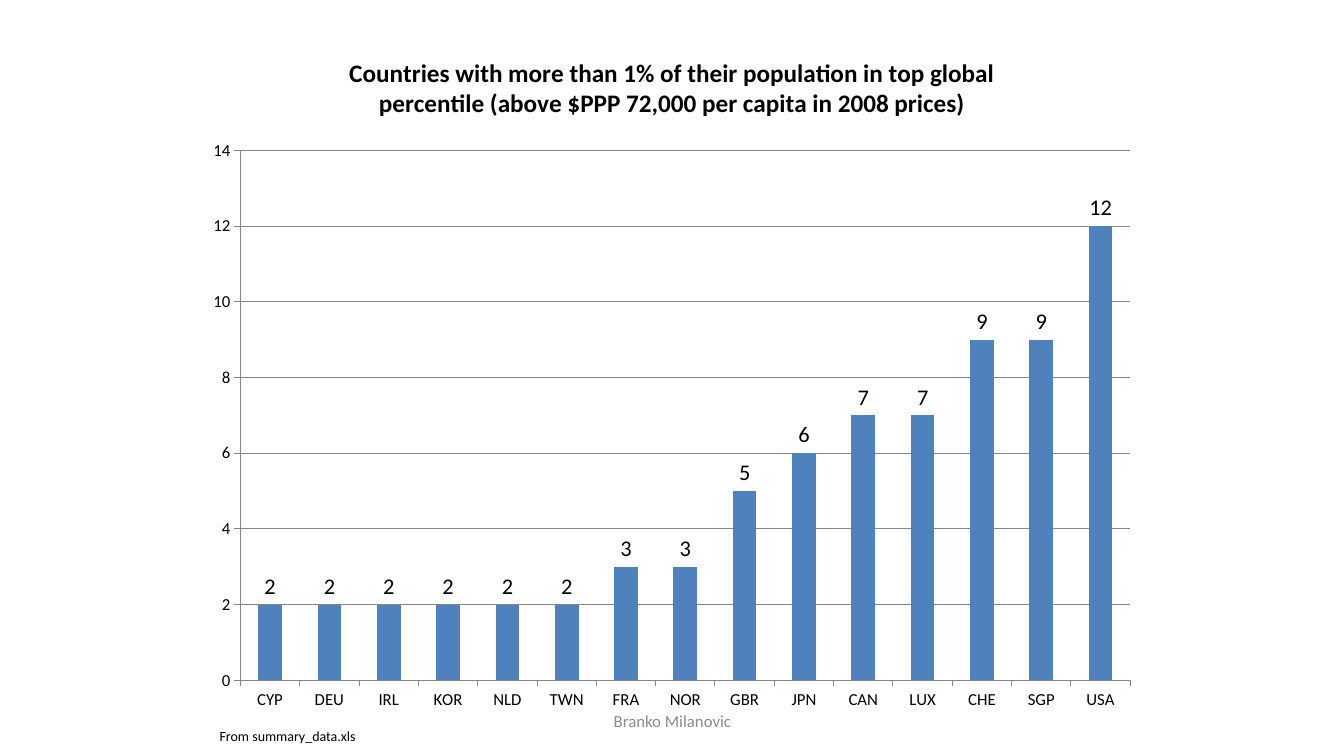
from lxml import etree
from pptx import Presentation
from pptx import util as u
from pptx.chart.data import CategoryChartData
from pptx.dml.color import RGBColor
from pptx.enum import chart as ch, text
from pptx.oxml.ns import qn

COLORS = {"bar": "4F81BD", "grid": "878787", "text": "000000", "footer": "8C8C8C"}
FONT = "Calibri"
TITLE = ("Countries with more than 1% of their population in top global "
         "percentile (above $PPP 72,000 per capita in 2008 prices)")
SHARES = {"CYP": 2, "DEU": 2, "IRL": 2, "KOR": 2, "NLD": 2, "TWN": 2,
          "FRA": 3, "NOR": 3, "GBR": 5, "JPN": 6, "CAN": 7, "LUX": 7,
          "CHE": 9, "SGP": 9, "USA": 12}


def style_font(font, size, color="text", bold=False):
    font.name, font.size, font.bold = FONT, u.Pt(size), bold
    font.color.rgb = RGBColor.from_string(COLORS[color])


def style_line(line):
    line.color.rgb = RGBColor.from_string(COLORS["grid"])
    line.width = u.Pt(0.75)


def add_note(s, box, words, size, color="text",
             align=text.PP_ALIGN.LEFT, anchor=text.MSO_ANCHOR.TOP):
    tf = s.shapes.add_textbox(*map(u.Inches, box)).text_frame
    tf.word_wrap = True
    tf.vertical_anchor = anchor
    p = tf.paragraphs[0]
    p.alignment = align
    r = p.add_run()
    r.text = words
    style_font(r.font, size, color)


def place_plot(chart, **fractions):
    """Fix the inner plot area as fractions of the chart box."""
    area = chart._chartSpace.chart.plotArea
    for old in area.findall(qn("c:layout")):
        area.remove(old)
    layout = etree.Element(qn("c:layout"))
    manual = etree.SubElement(layout, qn("c:manualLayout"))
    settings = {"layoutTarget": "inner", "xMode": "edge", "yMode": "edge", **fractions}
    for name, value in settings.items():
        etree.SubElement(manual, qn(f"c:{name}")).set("val", str(value))
    area.insert(0, layout)


def add_share_chart(s, box):
    data = CategoryChartData()
    data.categories = list(SHARES)
    data.add_series("Series 1", list(SHARES.values()))
    chart = s.shapes.add_chart(ch.XL_CHART_TYPE.COLUMN_CLUSTERED,
                               *map(u.Inches, box), data).chart
    style_font(chart.font, 12)
    chart.has_legend = False
    chart.has_title = True
    p = chart.chart_title.text_frame.paragraphs[0]
    r = p.add_run()
    r.text = TITLE
    style_font(r.font, 18, bold=True)
    chart.chart_title.include_in_layout = False
    place_plot(chart, x=0.048, y=0.172, w=0.932, h=0.764)

    for axis in (chart.category_axis, chart.value_axis):
        axis.major_tick_mark = ch.XL_TICK_MARK.OUTSIDE
        axis.minor_tick_mark = ch.XL_TICK_MARK.NONE
        style_line(axis.format.line)
    chart.category_axis.has_major_gridlines = False
    values = chart.value_axis
    values.minimum_scale, values.maximum_scale, values.major_unit = 0, 14, 2
    values.has_major_gridlines = True
    style_line(values.major_gridlines.format.line)

    plot = chart.plots[0]
    plot.gap_width = 150
    plot.vary_by_categories = False
    fill = plot.series[0].format.fill
    fill.solid()
    fill.fore_color.rgb = RGBColor.from_string(COLORS["bar"])
    plot.has_data_labels = True
    labels = plot.data_labels
    labels.show_value = True
    labels.position = ch.XL_LABEL_POSITION.OUTSIDE_END
    style_font(labels.font, 16)


def main():
    prs = Presentation()
    prs.slide_width, prs.slide_height = u.Inches(13.33), u.Inches(7.5)
    s = prs.slides.add_slide(prs.slide_layouts[6])
    add_note(s, (4.56, 6.95, 4.22, 0.4), "Branko Milanovic", 12, "footer",
             text.PP_ALIGN.CENTER, text.MSO_ANCHOR.MIDDLE)
    add_share_chart(s, (1.93, 0.31, 9.47, 6.88))
    add_note(s, (2.08, 7.17, 3, 0.27), "From summary_data.xls", 10)
    prs.save("out.pptx")


if __name__ == "__main__":
    main()
